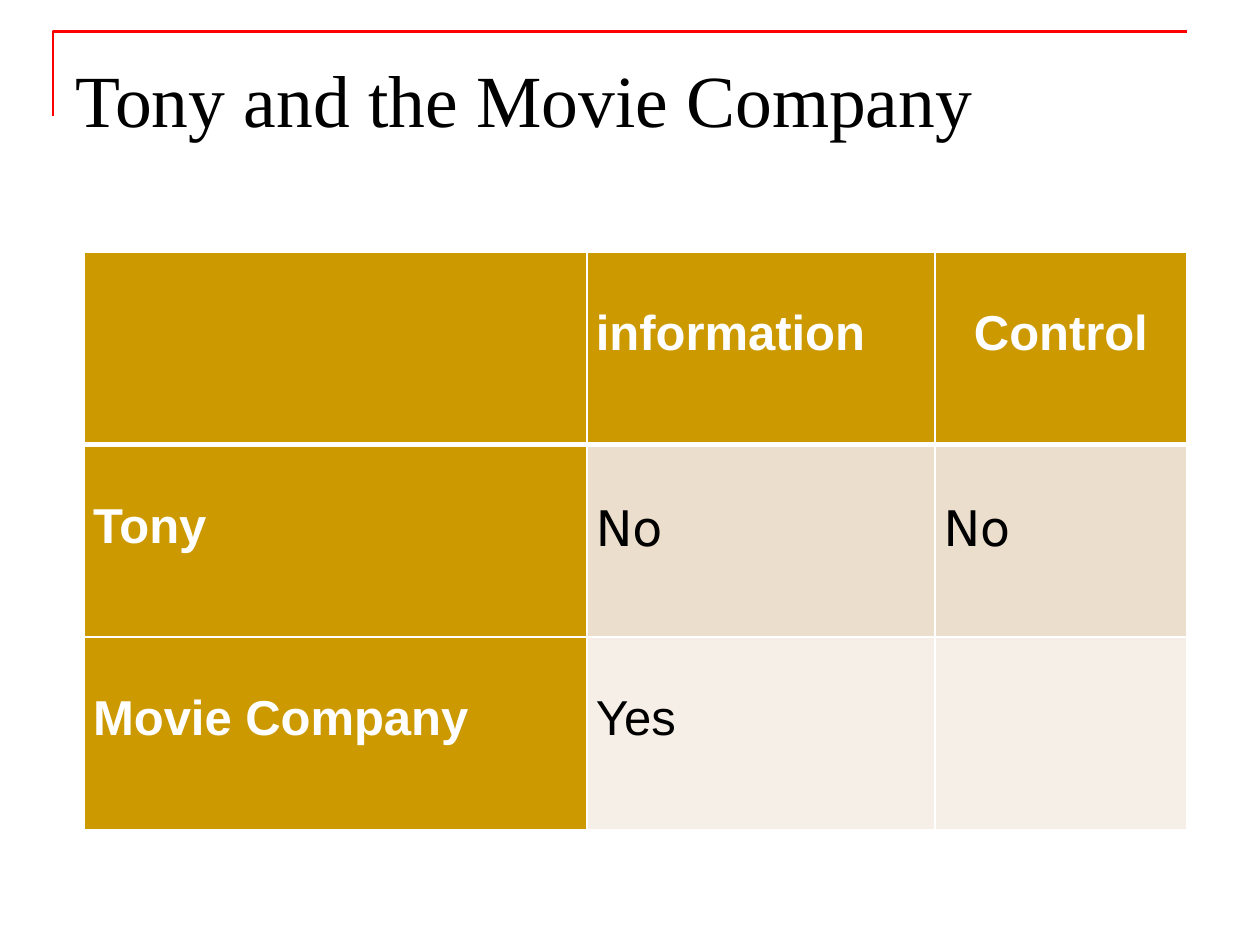
from lxml.etree import SubElement
from pptx import Presentation
from pptx.dml.color import RGBColor
from pptx.enum.text import PP_ALIGN as Align
from pptx.oxml.ns import qn
from pptx.util import Pt

# Content
TITLE = "Tony and the Movie Company"
ROWS = [
    ["", "information", "Control"],
    ["Tony", "No", "No"],
    ["Movie Company", "Yes", ""],
]
COLUMN_WIDTHS = [287.3, 198.7, 144]
ROW_HEIGHT = 110
HEADER_FILL = "CC9900"
BODY_FILLS = ["ECDECC", "F6EFE7"]
CORNER = [(30.24, 66.24), (30.24, 18), (678.24, 18)]


def color(value):
    return RGBColor.from_string(value)


def style_run(run, font, size, value, bold=False):
    run.font.name = font
    run.font.size = Pt(size)
    run.font.bold = bold
    run.font.color.rgb = color(value)


def set_borders(cell, bottom_width):
    properties = cell._tc.get_or_add_tcPr()
    sides = [("a:lnL", 1), ("a:lnR", 1), ("a:lnT", 1), ("a:lnB", bottom_width)]
    for index, (tag, width) in enumerate(sides):
        line = properties.makeelement(qn(tag), {"w": str(Pt(width))})
        fill = SubElement(line, qn("a:solidFill"))
        SubElement(fill, qn("a:srgbClr"), val="FFFFFF")
        properties.insert(index, line)


def add_corner(slide):
    builder = slide.shapes.build_freeform(*map(Pt, CORNER[0]))
    builder.add_line_segments([(Pt(x), Pt(y)) for x, y in CORNER[1:]], close=False)
    shape = builder.convert_to_shape()
    shape.shadow.inherit = False
    shape.fill.background()
    shape.line.color.rgb = color("FF0000")
    shape.line.width = Pt(1.5)


def add_title(slide):
    box = slide.shapes.add_textbox(Pt(36), Pt(21.6), Pt(648), Pt(90))
    frame = box.text_frame
    frame.word_wrap = True
    frame.margin_top = Pt(9)
    frame.text = TITLE
    style_run(frame.paragraphs[0].runs[0], "Times New Roman", 42, "000000")


def fill_cell(cell, text, row, column):
    header = row == 0 or column == 0
    cell.fill.solid()
    cell.fill.fore_color.rgb = color(HEADER_FILL if header else BODY_FILLS[row - 1])
    set_borders(cell, 3 if row == 0 else 1)
    if not text:
        return
    cell.margin_left = cell.margin_right = Pt(5)
    cell.margin_top = cell.margin_bottom = Pt(0)
    cell.text_frame.text = text
    paragraph = cell.text_frame.paragraphs[0]
    paragraph.line_spacing = 2.0
    if text == "Control":
        paragraph.alignment = Align.CENTER
    font = "DejaVu Sans" if text == "No" else "Arial"
    style_run(paragraph.runs[0], font, 28, "FFFFFF" if header else "000000", header)


def add_answers(slide):
    table = slide.shapes.add_table(
        len(ROWS), len(COLUMN_WIDTHS), Pt(48.24), Pt(144),
        Pt(sum(COLUMN_WIDTHS)), Pt(ROW_HEIGHT * len(ROWS))).table
    for column, width in zip(table.columns, COLUMN_WIDTHS):
        column.width = Pt(width)
    for row_index, texts in enumerate(ROWS):
        table.rows[row_index].height = Pt(ROW_HEIGHT)
        for column_index, text in enumerate(texts):
            fill_cell(table.cell(row_index, column_index), text, row_index, column_index)


def main():
    presentation = Presentation()
    presentation.slide_width, presentation.slide_height = Pt(720), Pt(540)
    slide = presentation.slides.add_slide(presentation.slide_layouts[6])
    add_corner(slide)
    add_title(slide)
    add_answers(slide)
    presentation.save("out.pptx")


if __name__ == "__main__":
    main()
